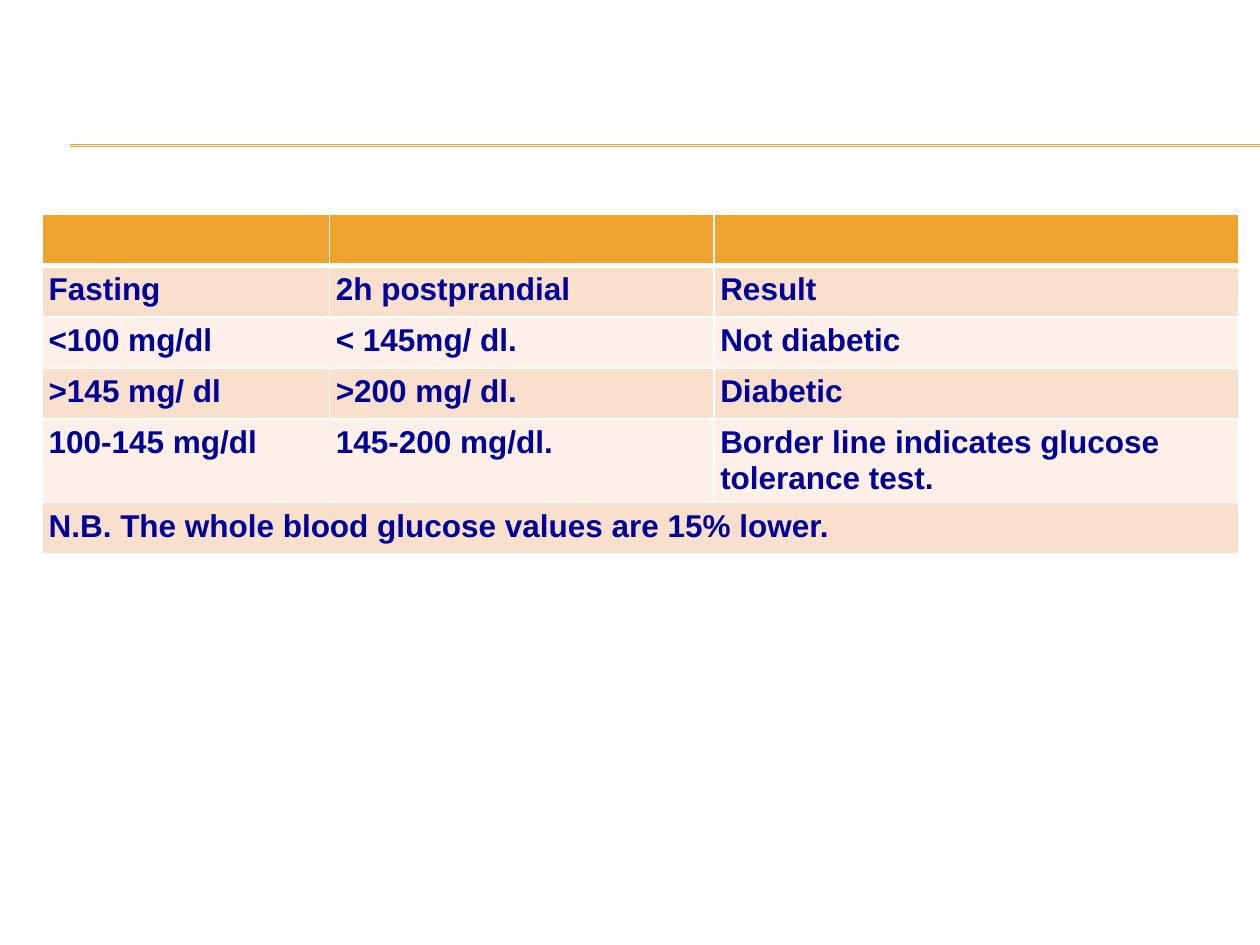
from lxml import etree
from pptx import Presentation
from pptx.dml.color import RGBColor
from pptx.enum.shapes import MSO_CONNECTOR
from pptx.oxml.ns import qn
from pptx.util import Cm, Pt

AMBER = RGBColor(0xF0, 0xA2, 0x2E)
PEACH = RGBColor(0xF9, 0xE0, 0xCD)
CREAM = RGBColor(0xFC, 0xF0, 0xE8)
NAVY = RGBColor(0x00, 0x00, 0x99)
WHITE = RGBColor(0xFF, 0xFF, 0xFF)

COLUMN_WIDTHS = (5.79, 7.75, 10.59)
ROW_HEIGHT = 1.03
CELL_MARGIN = Cm(0.13)
GLUCOSE_ROWS = (
    ("", "", ""),
    ("Fasting", "2h postprandial", "Result"),
    ("<100 mg/dl", "< 145mg/ dl.", "Not diabetic"),
    (">145 mg/ dl", ">200 mg/ dl.", "Diabetic"),
    ("100-145 mg/dl", "145-200 mg/dl.", "Border line indicates glucose tolerance test."),
    ("N.B. The whole blood glucose values are 15% lower.", "", ""),
)


def write(frame, text, size=18, color=NAVY, bold=True, font="Arial"):
    run = frame.paragraphs[0].add_run()
    run.text = text
    run.font.size = Pt(size)
    run.font.bold = bold
    run.font.name = font
    run.font.color.rgb = color


def add_rule(slide, left, top, width):
    rule = slide.shapes.add_connector(
        MSO_CONNECTOR.STRAIGHT, Cm(left), Cm(top), Cm(left + width), Cm(top)
    )
    rule.line.color.rgb = AMBER
    rule.line.width = Pt(0.75)
    etree.SubElement(rule._element.spPr, qn("a:effectLst"))


def add_header_rules(slide, left, top, width):
    for offset in (0, 0.03):
        add_rule(slide, left, top + offset, width)


def set_borders(cell, color=WHITE, top=1, bottom=1):
    """Draw all four cell edges; must run before the fill is set."""
    properties = cell._tc.get_or_add_tcPr()
    for edge, points in (("L", 1), ("R", 1), ("T", top), ("B", bottom)):
        line = etree.SubElement(properties, qn(f"a:ln{edge}"), w=str(Pt(points)))
        fill = etree.SubElement(line, qn("a:solidFill"))
        etree.SubElement(fill, qn("a:srgbClr"), val=str(color))


def style_cell(cell, row):
    set_borders(cell, top=3 if row == 1 else 1, bottom=3 if row == 0 else 1)
    cell.fill.solid()
    cell.fill.fore_color.rgb = AMBER if row == 0 else PEACH if row % 2 else CREAM
    cell.margin_left = cell.margin_right = CELL_MARGIN
    cell.margin_top = cell.margin_bottom = CELL_MARGIN


def add_glucose_table(slide, left, top):
    rows, columns = len(GLUCOSE_ROWS), len(COLUMN_WIDTHS)
    table = slide.shapes.add_table(
        rows, columns, Cm(left), Cm(top), Cm(sum(COLUMN_WIDTHS)), Cm(rows * ROW_HEIGHT)
    ).table
    for column, width in zip(table.columns, COLUMN_WIDTHS):
        column.width = Cm(width)
    for row, texts in enumerate(GLUCOSE_ROWS):
        table.rows[row].height = Cm(ROW_HEIGHT)
        for column, text in enumerate(texts):
            cell = table.cell(row, column)
            style_cell(cell, row)
            if text:
                write(cell.text_frame, text)
    table.cell(rows - 1, 0).merge(table.cell(rows - 1, columns - 1))


def main():
    presentation = Presentation()
    presentation.slide_width, presentation.slide_height = Cm(25.4), Cm(19.05)
    slide = presentation.slides.add_slide(presentation.slide_layouts[6])
    add_header_rules(slide, left=1.42, top=2.92, width=23.98)
    add_glucose_table(slide, left=0.85, top=4.32)
    presentation.save("out.pptx")


if __name__ == "__main__":
    main()
